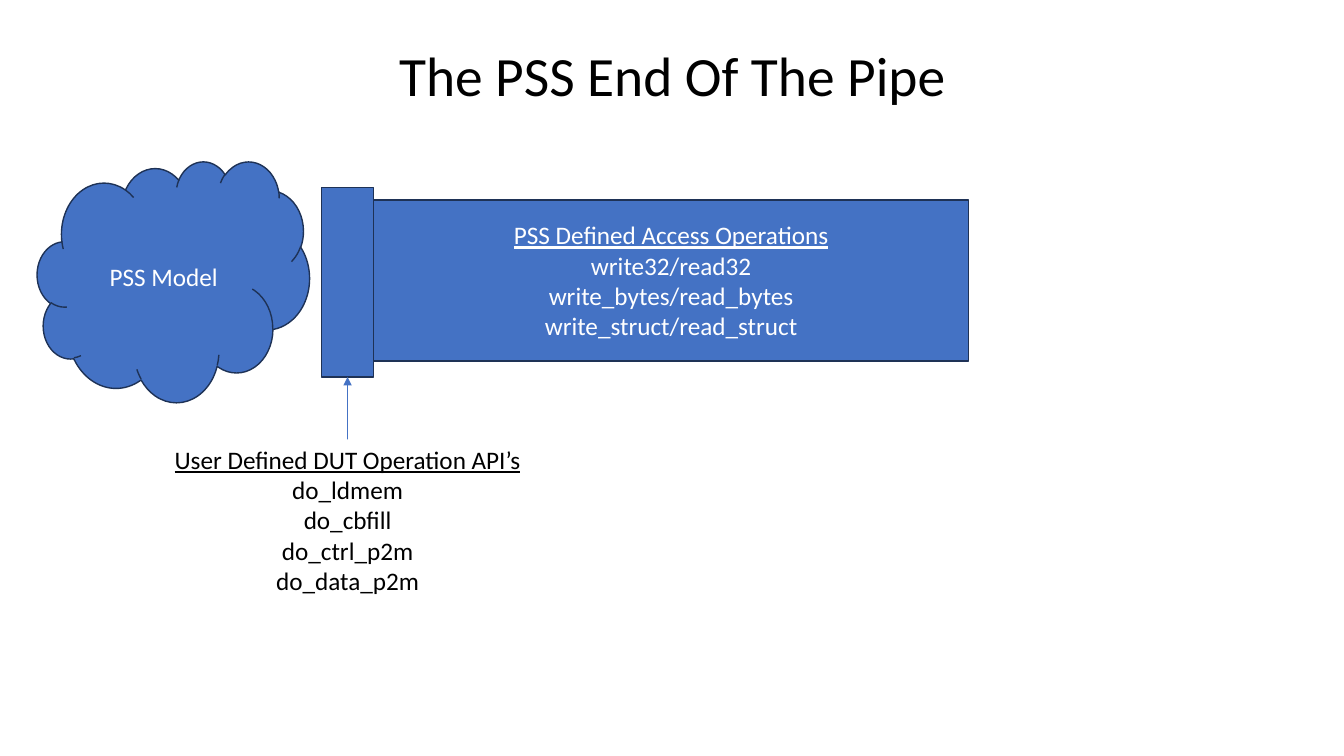
from typing import NamedTuple

from lxml.etree import SubElement
from pptx import Presentation
from pptx.dml.color import RGBColor
from pptx.enum.shapes import MSO_CONNECTOR, MSO_SHAPE
from pptx.enum.text import MSO_ANCHOR, MSO_AUTO_SIZE, PP_ALIGN
from pptx.oxml.ns import qn
from pptx.util import Cm, Pt

BLUE = RGBColor(0x44, 0x72, 0xC4)
NAVY = RGBColor(0x1E, 0x32, 0x56)
WHITE = RGBColor(0xFF, 0xFF, 0xFF)
BLACK = RGBColor(0, 0, 0)


class Box(NamedTuple):
    """A rectangle in centimetres."""
    left: float
    top: float
    width: float
    height: float

    def lengths(self):
        """Return the four measures as slide lengths."""
        return [Cm(measure) for measure in self]


def write(frame, lines, size=18, color=BLACK, heading=False, spacing=1.0,
          anchor=MSO_ANCHOR.MIDDLE, wrap=True):
    """Fill a text frame with centred lines, underlining a heading line."""
    frame.word_wrap = wrap
    frame.vertical_anchor = anchor
    for index, line in enumerate(lines):
        paragraph = frame.paragraphs[0] if index == 0 else frame.add_paragraph()
        paragraph.alignment = PP_ALIGN.CENTER
        paragraph.line_spacing = spacing
        run = paragraph.add_run()
        run.text = line
        run.font.name = "Calibri"
        run.font.size = Pt(size)
        run.font.color.rgb = color
        if heading and index == 0:
            run.font.underline = True


def add_solid(shapes, kind, box):
    """Add a blue shape with a navy outline."""
    solid = shapes.add_shape(kind, *box.lengths())
    solid.shadow.inherit = False
    solid.fill.solid()
    solid.fill.fore_color.rgb = BLUE
    solid.line.color.rgb = NAVY
    solid.line.width = Pt(1)
    return solid


def add_operations(slide, box, lines, color):
    """Add an underlined heading with its operations below."""
    operations = slide.shapes.add_textbox(*box.lengths())
    write(operations.text_frame, lines, color=color, heading=True,
          anchor=MSO_ANCHOR.TOP, wrap=False)
    operations.text_frame.auto_size = MSO_AUTO_SIZE.SHAPE_TO_FIT_TEXT
    return operations


def add_title(slide, box, text):
    """Place and format the slide title."""
    title = slide.shapes.title
    title.left, title.top, title.width, title.height = box.lengths()
    write(title.text_frame, [text], size=39.6, spacing=0.9)


def add_pipe(slide, box):
    """Draw the flange and barrel of the pipe and return the flange."""
    flange_width, inset = 1.32, 0.32
    pipe = slide.shapes.add_group_shape()
    flange = add_solid(pipe.shapes, MSO_SHAPE.RECTANGLE,
                       box._replace(width=flange_width))
    barrel = Box(box.left + flange_width, box.top + inset,
                 box.width - flange_width, 4.06)
    add_solid(pipe.shapes, MSO_SHAPE.RECTANGLE, barrel)
    return flange


def add_model(slide, box):
    """Draw the model cloud."""
    model = add_solid(slide.shapes, MSO_SHAPE.CLOUD, box)
    write(model.text_frame, ["PSS Model"], color=WHITE)


def add_arrow(slide, source, target):
    """Point from the top of the source to the bottom of the target."""
    arrow = slide.shapes.add_connector(MSO_CONNECTOR.STRAIGHT, 0, 0, 0, 0)
    arrow.begin_connect(source, 0)
    arrow.end_connect(target, 2)
    arrow.line.color.rgb = BLUE
    arrow.line.width = Pt(0.5)
    SubElement(arrow.line._get_or_add_ln(), qn("a:tailEnd"), type="triangle")
    SubElement(arrow._element.spPr, qn("a:effectLst"))


def main():
    """Build the slide and save it."""
    deck = Presentation()
    deck.slide_width, deck.slide_height = Cm(33.87), Cm(19.05)
    slide = deck.slides.add_slide(deck.slide_layouts[5])
    add_title(slide, Box(2.34, 1.02, 29.21, 1.93), "The PSS End Of The Pipe")
    flange = add_pipe(slide, Box(8.1, 4.72, 16.31, 4.78))
    add_model(slide, Box(0.94, 4.06, 6.86, 6.07))
    add_operations(slide, Box(12.65, 5.41, 8.53, 3.33), [
        "PSS Defined Access Operations", "write32/read32",
        "write_bytes/read_bytes", "write_struct/read_struct"], WHITE)
    user_operations = add_operations(slide, Box(4.1, 11.07, 9.32, 4.11), [
        "User Defined DUT Operation API’s", "do_ldmem", "do_cbfill",
        "do_ctrl_p2m", "do_data_p2m"], BLACK)
    add_arrow(slide, user_operations, flange)
    deck.save("out.pptx")


if __name__ == "__main__":
    main()
